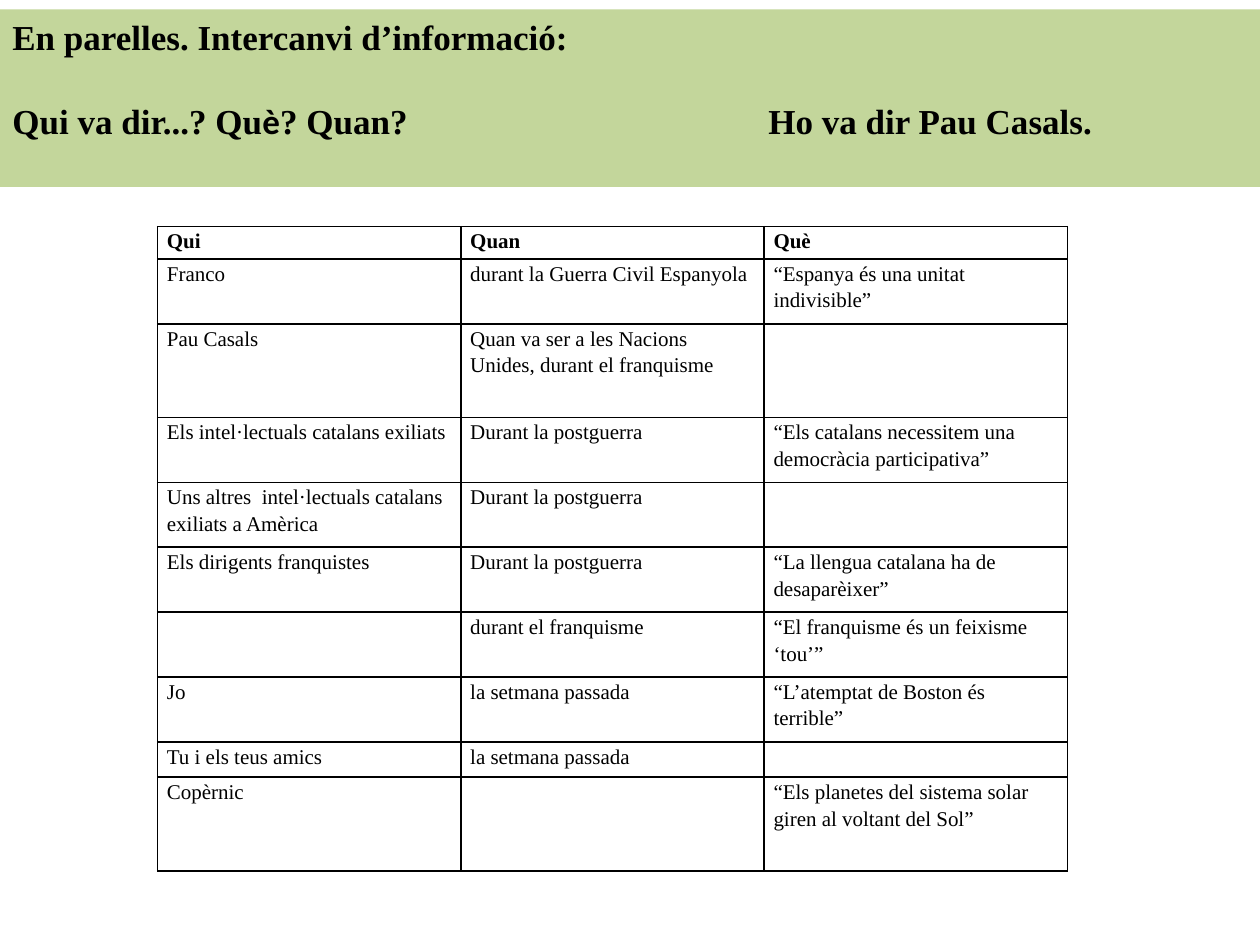
from lxml import etree
from pptx import Presentation
from pptx.dml.color import RGBColor
from pptx.enum import shapes, text
from pptx.oxml import ns
from pptx.util import Pt

COLORS = {"band": "C3D69B", "ink": "000000"}
SERIF = "Times New Roman"
SHORT, MID, TALL = 18.5, 37.1, 53.5
ROWS = [
    (SHORT, "Qui", "Quan", "Què"),
    (MID, "Franco", "durant la Guerra Civil Espanyola",
     "“Espanya és una unitat indivisible”"),
    (TALL, "Pau Casals",
     "Quan va ser a les Nacions Unides, durant el franquisme", ""),
    (MID, "Els intel·lectuals catalans exiliats", "Durant la postguerra",
     "“Els catalans necessitem una democràcia participativa”"),
    (MID, "Uns altres  intel·lectuals catalans exiliats a Amèrica",
     "Durant la postguerra", ""),
    (MID, "Els dirigents franquistes", "Durant la postguerra",
     "“La llengua catalana ha de desaparèixer”"),
    (MID, "", "durant el franquisme", "“El franquisme és un feixisme ‘tou’”"),
    (MID, "Jo", "la setmana passada", "“L’atemptat de Boston és terrible”"),
    (SHORT, "Tu i els teus amics", "la setmana passada", ""),
    (TALL, "Copèrnic", "",
     "“Els planetes del sistema solar giren al voltant del Sol”"),
]


def color(name):
    return RGBColor.from_string(COLORS[name])


def style(font, size, bold):
    font.name, font.size, font.bold = SERIF, Pt(size), bold
    font.color.rgb = color("ink")


def add_node(parent, tag, **attrs):
    return etree.SubElement(parent, ns.qn(tag), attrs)


def add_tab(para, pos):
    """Set a left tab stop, which must come before the paragraph's font."""
    stops = add_node(para._p.get_or_add_pPr(), "a:tabLst")
    add_node(stops, "a:tab", pos=str(Pt(pos)), algn="l")


def add_edges(cell):
    props = cell._tc.get_or_add_tcPr()
    for side in ("a:lnL", "a:lnR", "a:lnT", "a:lnB"):
        line = add_node(props, side, w=str(Pt(1)))
        fill = add_node(line, "a:solidFill")
        add_node(fill, "a:srgbClr", val=COLORS["ink"])


def add_title(slide, left, top, width, height):
    band = slide.shapes.add_shape(shapes.MSO_SHAPE.RECTANGLE, Pt(left),
                                  Pt(top), Pt(width), Pt(height))
    band.shadow.inherit = False
    band.fill.solid()
    band.fill.fore_color.rgb = color("band")
    band.line.fill.background()
    frame = band.text_frame
    frame.word_wrap = True
    frame.vertical_anchor = text.MSO_ANCHOR.TOP
    head, ask = frame.paragraphs[0], frame.add_paragraph()
    ask.space_before = Pt(24)
    add_tab(ask, 432)
    for para in (head, ask):
        para.alignment = text.PP_ALIGN.LEFT
        style(para.font, 20, True)
    head.add_run().text = "En parelles. Intercanvi d’informació:"
    for part in ("Qui va dir...? Qu", "è", "? Quan?\tHo va dir Pau Casals."):
        run = ask.add_run()
        run.text = part
        if part == "è":
            run.font.name = "Calibri"


def fill_cell(cell, words, bold):
    cell.margin_left = cell.margin_right = Pt(5.4)
    cell.margin_top = cell.margin_bottom = 0
    para = cell.text_frame.paragraphs[0]
    para.line_spacing = 1.15
    style(para.font, 12, bold)
    para.add_run().text = words
    add_edges(cell)
    cell.fill.background()


def add_quotes(slide, left, top, width):
    cols = len(ROWS[0]) - 1
    height = sum(row[0] for row in ROWS)
    table = slide.shapes.add_table(len(ROWS), cols, Pt(left), Pt(top),
                                   Pt(width), Pt(height)).table
    table.first_row = table.horz_banding = False
    for col in table.columns:
        col.width = Pt(width / cols)
    for r, (tall, *cells) in enumerate(ROWS):
        table.rows[r].height = Pt(tall)
        for c, words in enumerate(cells):
            fill_cell(table.cell(r, c), words, r == 0)


def main():
    deck = Presentation()
    deck.slide_width, deck.slide_height = Pt(720), Pt(540)
    slide = deck.slides.add_slide(deck.slide_layouts[6])
    add_quotes(slide, 90, 129.5, 520)
    add_title(slide, 0, 5.3, 720, 101.5)
    deck.save("out.pptx")


if __name__ == "__main__":
    main()
